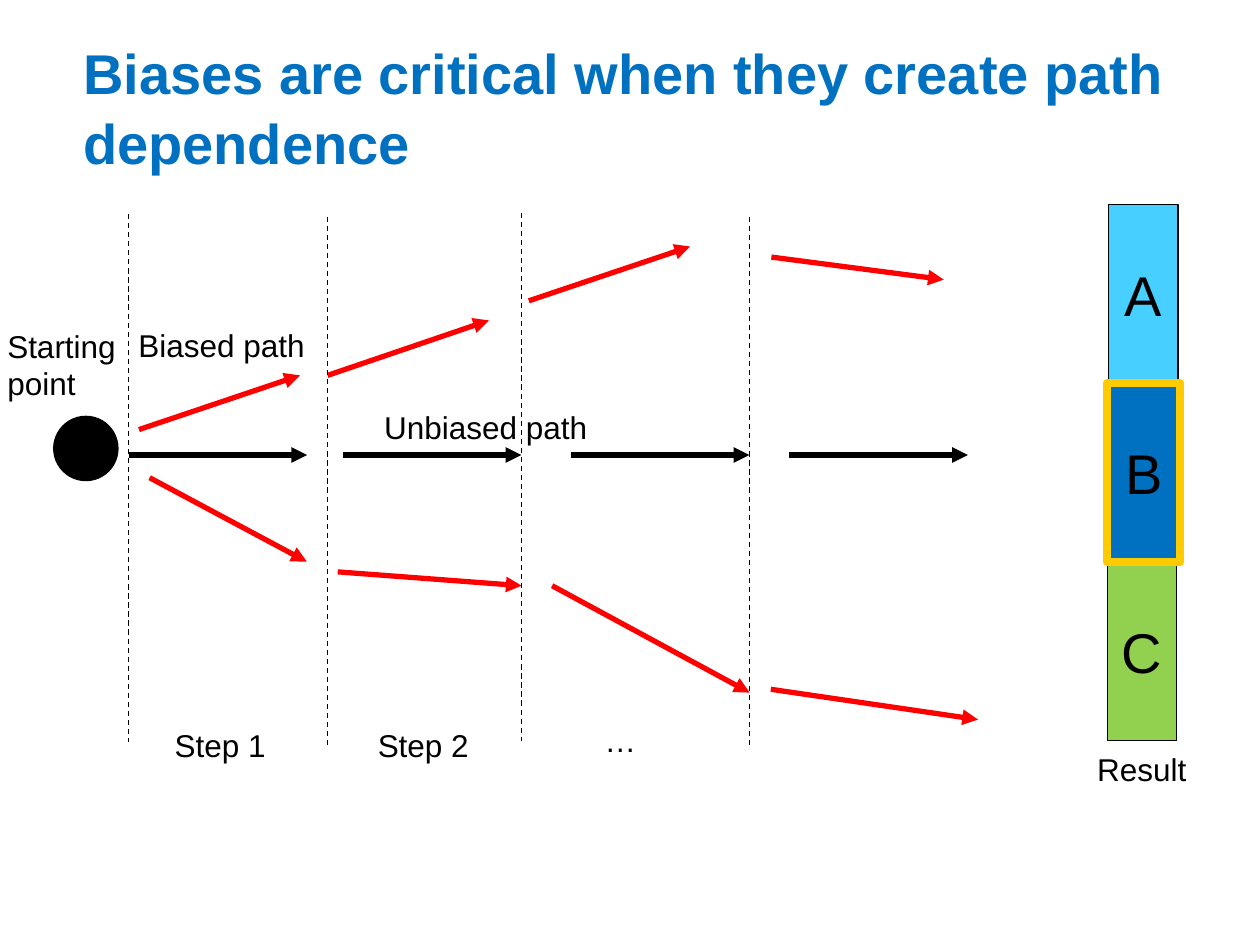
import pptx
import pptx.dml.color
import pptx.enum.dml
import pptx.enum.shapes
import pptx.enum.text
import pptx.oxml.ns
import pptx.util
from lxml import etree

Pt = pptx.util.Pt
SHAPES = pptx.enum.shapes.MSO_SHAPE
ANCHOR = pptx.enum.text.MSO_ANCHOR
ALIGN = pptx.enum.text.PP_ALIGN

BLACK, RED, BLUE = "000000", "FF0000", "0070C0"
DIVIDER_HEIGHT = 301.7
PATH_Y = 260

DIVIDERS = [(73.5, 122.4), (187.2, 123.8), (298.1, 121.7), (428.4, 123.8)]
UNBIASED_STARTS = [73.5, 195.9, 326.2, 451.1]
ARROW_LENGTH = 102
UPPER_PATH = [
    (79.4, 245.5, 171.4, 214.5),
    (187.2, 214.5, 279.4, 183.1),
    (302.2, 171.9, 394.4, 140.9),
    (440.8, 146.9, 539.3, 159.8),
]
LOWER_PATH = [
    (85.5, 273, 175.4, 321),
    (193, 326.8, 298.1, 334.7),
    (315.5, 334.7, 428.4, 395.8),
    (440.5, 393.9, 558.9, 411.2),
]
RESULTS = [
    ("A", 633.6, 116.7, 39.6, "47CFFF", BLACK, 0.75),
    ("C", 632.7, 321, 39.6, "92D050", BLACK, 0.75),
    ("B", 632.7, 218.8, 41.8, BLUE, "FECB00", 4.5),
]
LABELS = [
    ("Unbiased path", 212.4, 229.7, 131.8),
    ("Starting\npoint", -2.9, 183.1, 82.1),
    ("Biased path", 72, 182.7, 115.2),
    ("Step 1", 92.7, 411.4, 67),
    ("Step 2", 208.8, 411.4, 67),
    ("…", 338.4, 408.4, 32.4),
    ("Result", 619.9, 425, 66.2),
]


def rgb(color):
    return pptx.dml.color.RGBColor.from_string(color)


def format_text(tf, size, color=BLACK, bold=False, align=ALIGN.LEFT):
    for p in tf.paragraphs:
        p.alignment = align
        for r in p.runs:
            r.font.name = "Arial"
            r.font.size = Pt(size)
            r.font.bold = bold
            r.font.color.rgb = rgb(color)


def set_title(s, text):
    sp = s.shapes.title
    sp.left, sp.top, sp.width, sp.height = Pt(47.5), Pt(20.5), Pt(628.6), Pt(85)
    tf = sp.text_frame
    tf.text = text
    tf.word_wrap = True
    tf.vertical_anchor = ANCHOR.TOP
    tf.margin_left = tf.margin_right = tf.margin_top = tf.margin_bottom = 0
    tf.paragraphs[0].line_spacing = 1.04
    format_text(tf, 32, BLUE, bold=True)


def add_label(s, text, left, top, width):
    height = 29 + 21.5 * text.count("\n")
    tf = s.shapes.add_textbox(Pt(left), Pt(top), Pt(width), Pt(height)).text_frame
    tf.text = text
    tf.word_wrap = False
    format_text(tf, 18)


def add_filled_shape(s, kind, left, top, width, height, fill, line, weight=0.75):
    sp = s.shapes.add_shape(kind, Pt(left), Pt(top), Pt(width), Pt(height))
    sp.shadow.inherit = False
    sp.fill.solid()
    sp.fill.fore_color.rgb = rgb(fill)
    sp.line.color.rgb = rgb(line)
    sp.line.width = Pt(weight)
    return sp


def add_result(s, text, left, top, width, fill, line, weight):
    sp = add_filled_shape(s, SHAPES.RECTANGLE, left, top, width, 102.2, fill, line, weight)
    tf = sp.text_frame
    tf.text = text
    tf.word_wrap = False
    tf.vertical_anchor = ANCHOR.MIDDLE
    format_text(tf, 32, align=ALIGN.CENTER)


def add_line(s, x1, y1, x2, y2, color=BLACK, weight=0.75):
    line = s.shapes.add_connector(
        pptx.enum.shapes.MSO_CONNECTOR.STRAIGHT, Pt(x1), Pt(y1), Pt(x2), Pt(y2))
    line.line.color.rgb = rgb(color)
    line.line.width = Pt(weight)
    etree.SubElement(line._element.spPr, pptx.oxml.ns.qn("a:effectLst"))
    return line


def add_divider(s, x, top):
    line = add_line(s, x, top, x, top + DIVIDER_HEIGHT)
    line.line.dash_style = pptx.enum.dml.MSO_LINE.DASH


def add_arrow(s, x1, y1, x2, y2, color):
    line = add_line(s, x1, y1, x2, y2, color, 3)
    ln = line.line._get_or_add_ln()
    etree.SubElement(ln, pptx.oxml.ns.qn("a:tailEnd"), type="triangle")


def main():
    prs = pptx.Presentation()
    prs.slide_width, prs.slide_height = Pt(720), Pt(540)
    s = prs.slides.add_slide(prs.slide_layouts.get_by_name("Title Only"))

    set_title(s, "Biases are critical when they create path dependence")
    for result in RESULTS:
        add_result(s, *result)
    for x in UNBIASED_STARTS:
        add_arrow(s, x, PATH_Y, x + ARROW_LENGTH, PATH_Y, BLACK)
    for arrow in LOWER_PATH + UPPER_PATH:
        add_arrow(s, *arrow, RED)
    add_filled_shape(s, SHAPES.OVAL, 30.7, 237.9, 36.7, 36.7, BLACK, BLACK)
    for divider in DIVIDERS:
        add_divider(s, *divider)
    for label in LABELS:
        add_label(s, *label)

    prs.save("out.pptx")


if __name__ == "__main__":
    main()
